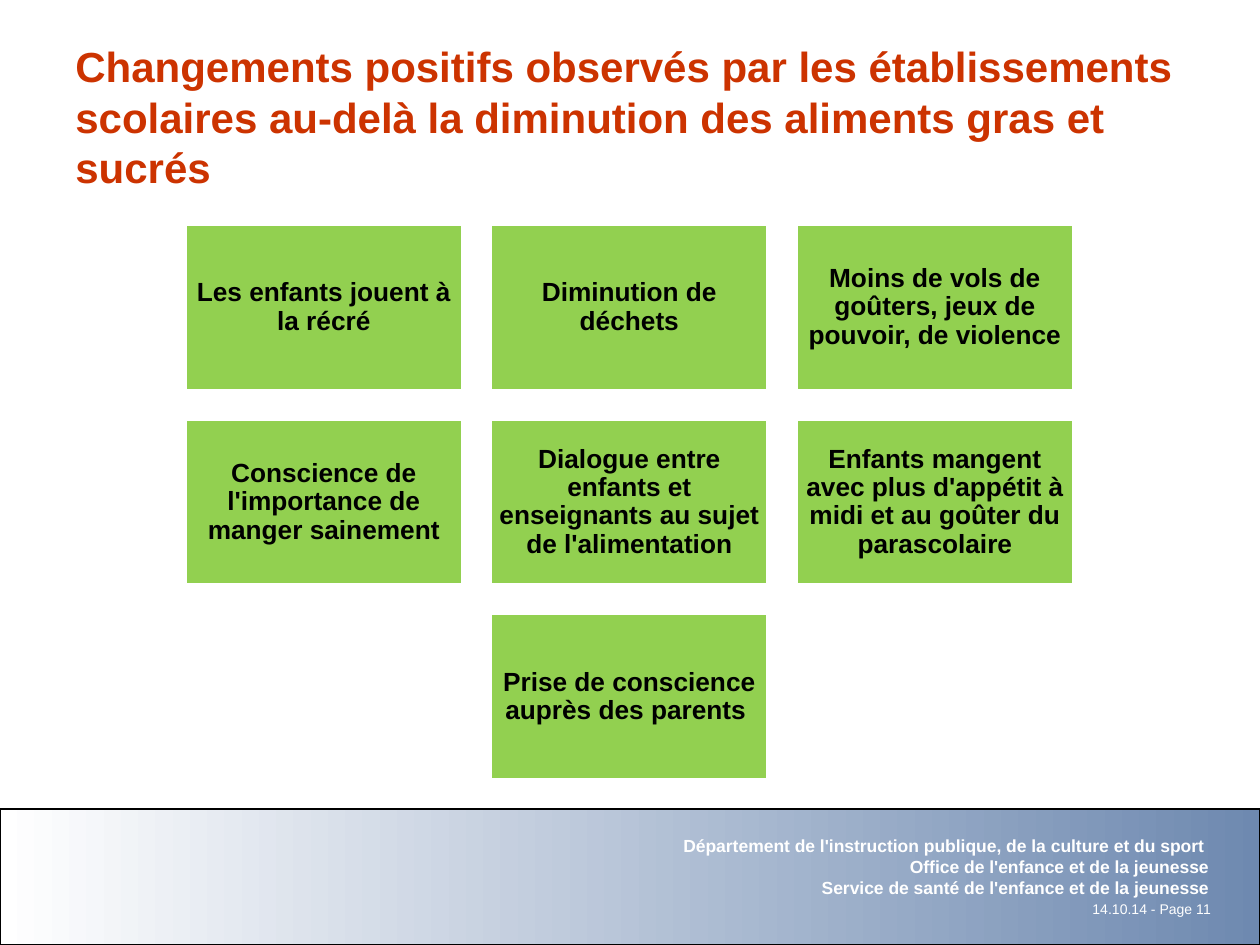
from dataclasses import dataclass

from pptx import Presentation
from pptx import util as u
from pptx.dml.color import RGBColor
from pptx.enum import shapes, text

Inches = u.Inches


@dataclass(frozen=True)
class Theme:
    font: str = "Arial"
    title: str = "CC3300"
    tile: str = "92D050"
    ink: str = "000000"
    paper: str = "FFFFFF"
    band: str = "6E89B0"
    title_size: int = 24
    tile_size: int = 15
    office_size: int = 10
    page_size: int = 8


THEME = Theme()
TITLE = (
    "Changements positifs observés par les établissements scolaires "
    "au-delà la diminution des aliments gras et sucrés"
)
CHANGES = [
    "Les enfants jouent à la récré",
    "Diminution de déchets",
    "Moins de vols de goûters, jeux de pouvoir, de violence",
    "Conscience de l'importance de manger sainement",
    "Dialogue entre enfants et enseignants au sujet de l'alimentation",
    "Enfants mangent avec plus d'appétit à midi et au goûter du parascolaire",
    "Prise de conscience auprès des parents ",
]
OFFICES = [
    "Département de l'instruction publique, de la culture et du sport ",
    "Office de l'enfance et de la jeunesse",
    "Service de santé de l'enfance et de la jeunesse",
]


def set_values(target, values):
    for name, value in values.items():
        setattr(target, name, value)


def write(shape, lines, size, color, bold=True, paragraph_format=None, frame_format=None):
    frame = shape.text_frame
    set_values(frame, {"word_wrap": True, **(frame_format or {})})
    frame.text = "\n".join(lines)
    for paragraph in frame.paragraphs:
        set_values(paragraph, paragraph_format or {})
        set_values(paragraph.font, {"name": THEME.font, "size": u.Pt(size), "bold": bold})
        paragraph.font.color.rgb = RGBColor.from_string(color)


def add_rectangle(slide, box, line_color, line_width):
    shape = slide.shapes.add_shape(shapes.MSO_SHAPE.RECTANGLE, *box)
    shape.shadow.inherit = False
    shape.line.color.rgb = RGBColor.from_string(line_color)
    shape.line.width = u.Pt(line_width)
    return shape


def add_title(slide, box):
    write(
        slide.shapes.add_textbox(*box), [TITLE], THEME.title_size, THEME.title,
        frame_format={"vertical_anchor": text.MSO_ANCHOR.MIDDLE},
    )


def add_tiles(slide, box, columns=3):
    left, top, width, height = box
    tile_width, tile_height = Inches(2.2), Inches(1.32)
    rows = [CHANGES[start:start + columns] for start in range(0, len(CHANGES), columns)]
    step_x = (width - tile_width) / (columns - 1)
    step_y = (height - tile_height) / (len(rows) - 1)
    margins = dict.fromkeys(
        ["margin_left", "margin_top", "margin_right", "margin_bottom"], Inches(0.06)
    )
    for row, labels in enumerate(rows):
        indent = (columns - len(labels)) * step_x / 2
        for column, label in enumerate(labels):
            tile_box = (
                round(left + indent + column * step_x),
                round(top + row * step_y),
                tile_width,
                tile_height,
            )
            tile = add_rectangle(slide, tile_box, THEME.paper, 2)
            tile.fill.solid()
            tile.fill.fore_color.rgb = RGBColor.from_string(THEME.tile)
            write(
                tile, [label], THEME.tile_size, THEME.ink,
                paragraph_format={"alignment": text.PP_ALIGN.CENTER, "line_spacing": 0.9},
                frame_format={"vertical_anchor": text.MSO_ANCHOR.MIDDLE, **margins},
            )


def add_footer(slide, box):
    left, top, width, height = box
    band = add_rectangle(slide, box, THEME.ink, 1)
    band.fill.gradient()
    band.fill.gradient_angle = 0
    for stop, color in zip(band.fill.gradient_stops, [THEME.paper, THEME.band]):
        stop.color.rgb = RGBColor.from_string(color)

    right_aligned = {"alignment": text.PP_ALIGN.RIGHT}
    page = slide.shapes.add_textbox(
        left + width - Inches(1.66), top + Inches(0.68), Inches(1.37), Inches(0.23)
    )
    write(page, ["14.10.14 - Page 11"], THEME.page_size, THEME.paper, False, right_aligned)
    offices = slide.shapes.add_textbox(
        left + width - Inches(4.69), top + Inches(0.16), Inches(4.38), Inches(0.6)
    )
    write(
        offices, OFFICES, THEME.office_size, THEME.paper,
        paragraph_format=right_aligned,
        frame_format={"word_wrap": False, "auto_size": text.MSO_AUTO_SIZE.SHAPE_TO_FIT_TEXT},
    )


def main():
    presentation = Presentation()
    set_values(presentation, {"slide_width": Inches(10), "slide_height": Inches(7.5)})
    slide = presentation.slides.add_slide(presentation.slide_layouts[6])
    add_footer(slide, (0, Inches(6.42), Inches(10), Inches(1.08)))
    add_title(slide, (Inches(0.5), Inches(0.3), Inches(9), Inches(1.25)))
    add_tiles(slide, (Inches(1.47), Inches(1.78), Inches(7.05), Inches(4.41)))
    presentation.save("out.pptx")


if __name__ == "__main__":
    main()
